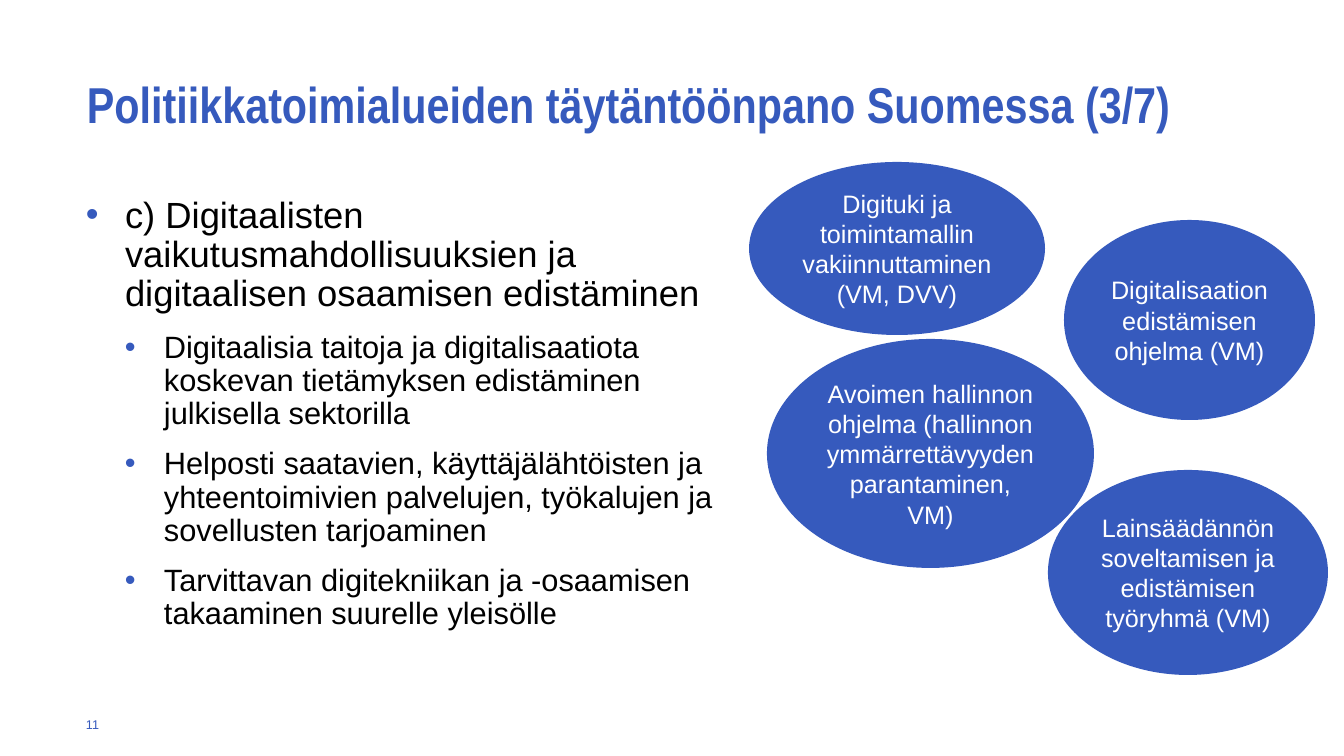
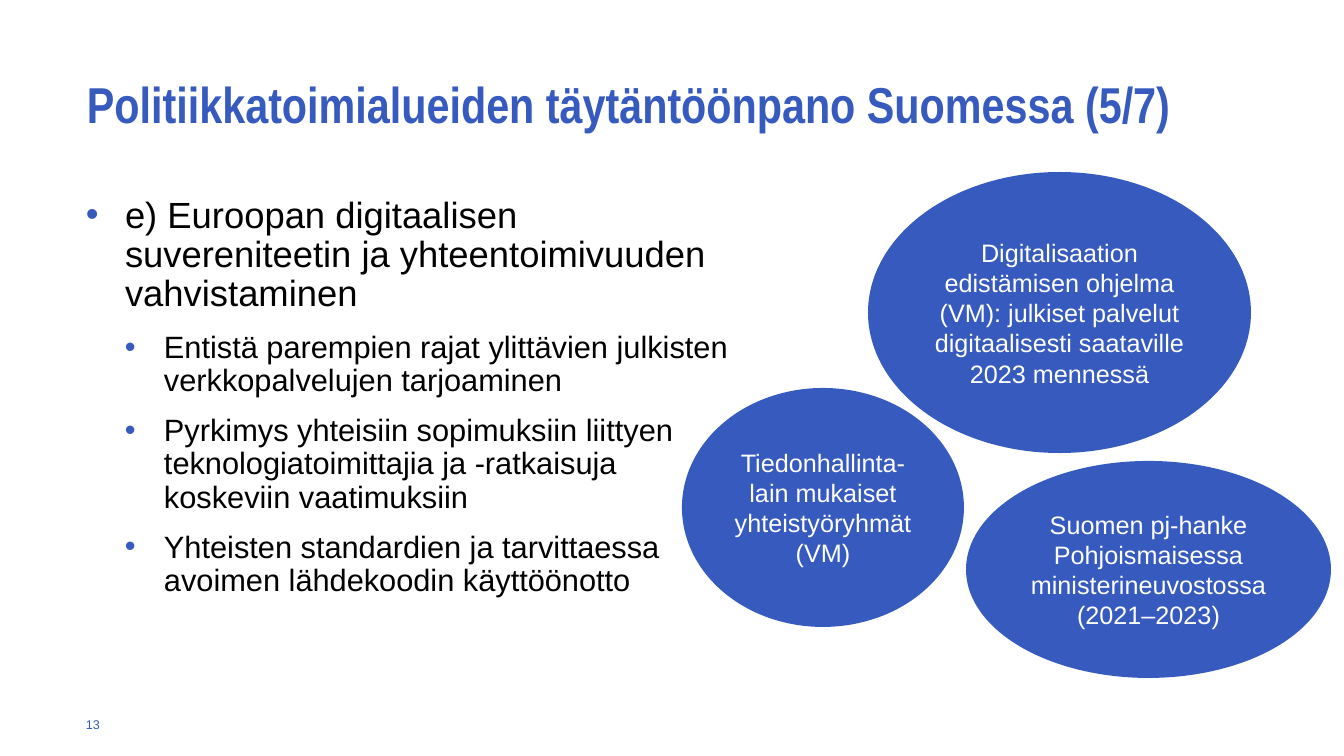
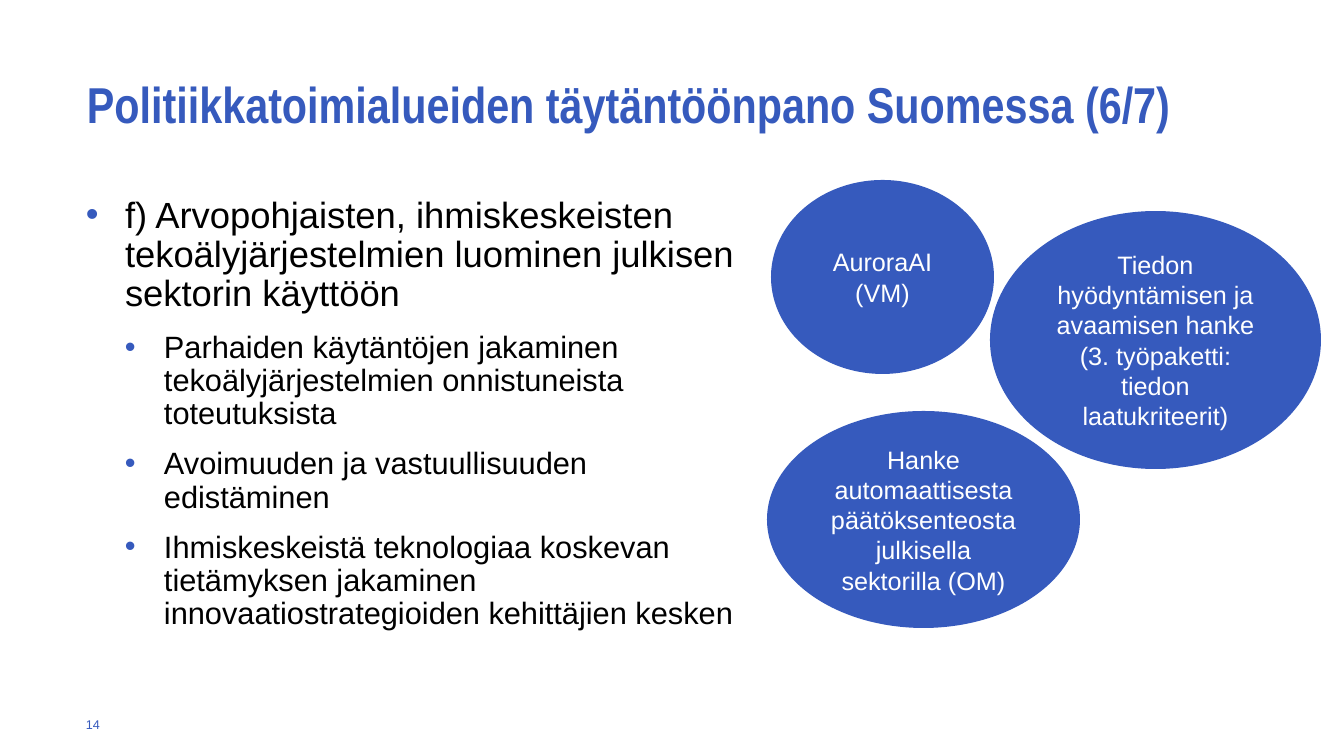
from lxml import etree
from pptx import Presentation
from pptx.dml.color import RGBColor
from pptx.enum.shapes import MSO_SHAPE
from pptx.enum.text import MSO_ANCHOR, PP_ALIGN
from pptx.oxml.ns import qn
from pptx.util import Pt

OVAL = MSO_SHAPE.OVAL
MIDDLE = MSO_ANCHOR.MIDDLE
TOP = MSO_ANCHOR.TOP
CENTER = PP_ALIGN.CENTER

EMU_PER_INCH = 914400
PX_PER_INCH = 100.8
BLUE = "365ABD"
BLACK = "000000"
WHITE = "FFFFFF"
BODY_FONT = "Arial"
TITLE_FONT = "Arial Narrow"
TITLE = "Politiikkatoimialueiden täytäntöönpano Suomessa ({}/7)"
INDENT = 39

SLIDES = [
    {
        "part": 3,
        "number": 11,
        "heading": "c) Digitaalisten vaikutusmahdollisuuksien ja digitaalisen osaamisen edistäminen",
        "points": [
            "Digitaalisia taitoja ja digitalisaatiota koskevan tietämyksen edistäminen julkisella sektorilla",
            "Helposti saatavien, käyttäjälähtöisten ja yhteentoimivien palvelujen, työkalujen ja sovellusten tarjoaminen",
            "Tarvittavan digitekniikan ja -osaamisen takaaminen suurelle yleisölle",
        ],
        "ovals": [
            ((749, 162, 296, 173), "Digituki ja toimintamallin vakiinnuttaminen (VM, DVV)"),
            ((1064, 220, 251, 200), "Digitalisaation edistämisen ohjelma (VM)"),
            ((767, 339, 327, 229), "Avoimen hallinnon ohjelma (hallinnon ymmärrettävyyden parantaminen, VM)"),
            ((1048, 470, 280, 205), "Lainsäädännön soveltamisen ja edistämisen työryhmä (VM)"),
        ],
    },
    {
        "part": 5,
        "number": 13,
        "heading": "e) Euroopan digitaalisen suvereniteetin ja yhteentoimivuuden vahvistaminen",
        "points": [
            "Entistä parempien rajat ylittävien julkisten verkkopalvelujen tarjoaminen",
            "Pyrkimys yhteisiin sopimuksiin liittyen teknologiatoimittajia ja -ratkaisuja koskeviin vaatimuksiin",
            "Yhteisten standardien ja tarvittaessa avoimen lähdekoodin käyttöönotto",
        ],
        "ovals": [
            ((868, 172, 383, 281), "Digitalisaation edistämisen ohjelma (VM): julkiset palvelut digitaalisesti saataville 2023 mennessä"),
            ((682, 388, 282, 239), "Tiedonhallinta-lain mukaiset yhteistyöryhmät (VM)"),
            ((966, 461, 365, 217), "Suomen pj-hanke Pohjoismaisessa ministerineuvostossa (2021–2023)"),
        ],
    },
    {
        "part": 6,
        "number": 14,
        "heading": "f) Arvopohjaisten, ihmiskeskeisten tekoälyjärjestelmien luominen julkisen sektorin käyttöön",
        "points": [
            "Parhaiden käytäntöjen jakaminen tekoälyjärjestelmien onnistuneista toteutuksista",
            "Avoimuuden ja vastuullisuuden edistäminen",
            "Ihmiskeskeistä teknologiaa koskevan tietämyksen jakaminen innovaatiostrategioiden kehittäjien kesken",
        ],
        "ovals": [
            ((771, 180, 223, 194), "AuroraAI (VM)"),
            ((990, 211, 331, 258), "Tiedon hyödyntämisen ja avaamisen hanke (3. työpaketti: tiedon laatukriteerit)"),
            ((767, 411, 313, 217), "Hanke automaattisesta päätöksenteosta julkisella sektorilla (OM)"),
        ],
    },
]


def px(n):
    return round(n * EMU_PER_INCH / PX_PER_INCH)


def rgb(color):
    return RGBColor.from_string(color)


def write(p, text, size, color, font=BODY_FONT, bold=False):
    p.text = text
    for r in p.runs:
        r.font.size = Pt(size)
        r.font.name = font
        r.font.bold = bold
        r.font.color.rgb = rgb(color)


def add_box(s, box, anchor):
    tf = s.shapes.add_textbox(*map(px, box)).text_frame
    tf.word_wrap = True
    tf.vertical_anchor = anchor
    tf.margin_left = tf.margin_right = tf.margin_top = tf.margin_bottom = 0
    return tf


def add_title(s, part):
    p = add_box(s, (87, 33, 1165, 146), MIDDLE).paragraphs[0]
    p.line_spacing = 0.95
    write(p, TITLE.format(part), 36, BLUE, TITLE_FONT, True)


def add_bullet(p, level):
    p.level = level
    pPr = p._p.get_or_add_pPr()
    pPr.set("marL", str(px(INDENT * (level + 1))))
    pPr.set("indent", str(-px(INDENT)))
    color = etree.SubElement(pPr, qn("a:buClr"))
    etree.SubElement(color, qn("a:srgbClr")).set("val", BLUE)
    etree.SubElement(pPr, qn("a:buFont")).set("typeface", BODY_FONT)
    etree.SubElement(pPr, qn("a:buChar")).set("char", "•")


def add_body(s, heading, points):
    tf = add_box(s, (86, 197, 665, 429), TOP)
    for i, text in enumerate([heading, *points]):
        p = tf.add_paragraph() if i else tf.paragraphs[0]
        add_bullet(p, 1 if i else 0)
        p.line_spacing = 0.9
        p.space_before = Pt(12 if i else 0)
        write(p, text, 22 if i else 26, BLACK)


def add_oval(s, box, text):
    sp = s.shapes.add_shape(OVAL, *map(px, box))
    sp.shadow.inherit = False
    sp.fill.solid()
    sp.fill.fore_color.rgb = rgb(BLUE)
    sp.line.fill.background()
    tf = sp.text_frame
    tf.word_wrap = True
    tf.vertical_anchor = MIDDLE
    p = tf.paragraphs[0]
    p.alignment = CENTER
    write(p, text, 18, WHITE)


def add_number(s, number):
    p = add_box(s, (86, 712, 40, 25), MIDDLE).paragraphs[0]
    write(p, str(number), 9, BLUE)


def main():
    prs = Presentation()
    prs.slide_width = px(1344)
    prs.slide_height = px(756)
    for content in SLIDES:
        s = prs.slides.add_slide(prs.slide_layouts[6])
        add_title(s, content["part"])
        add_body(s, content["heading"], content["points"])
        for box, text in content["ovals"]:
            add_oval(s, box, text)
        add_number(s, content["number"])
    prs.save("out.pptx")


if __name__ == "__main__":
    main()
